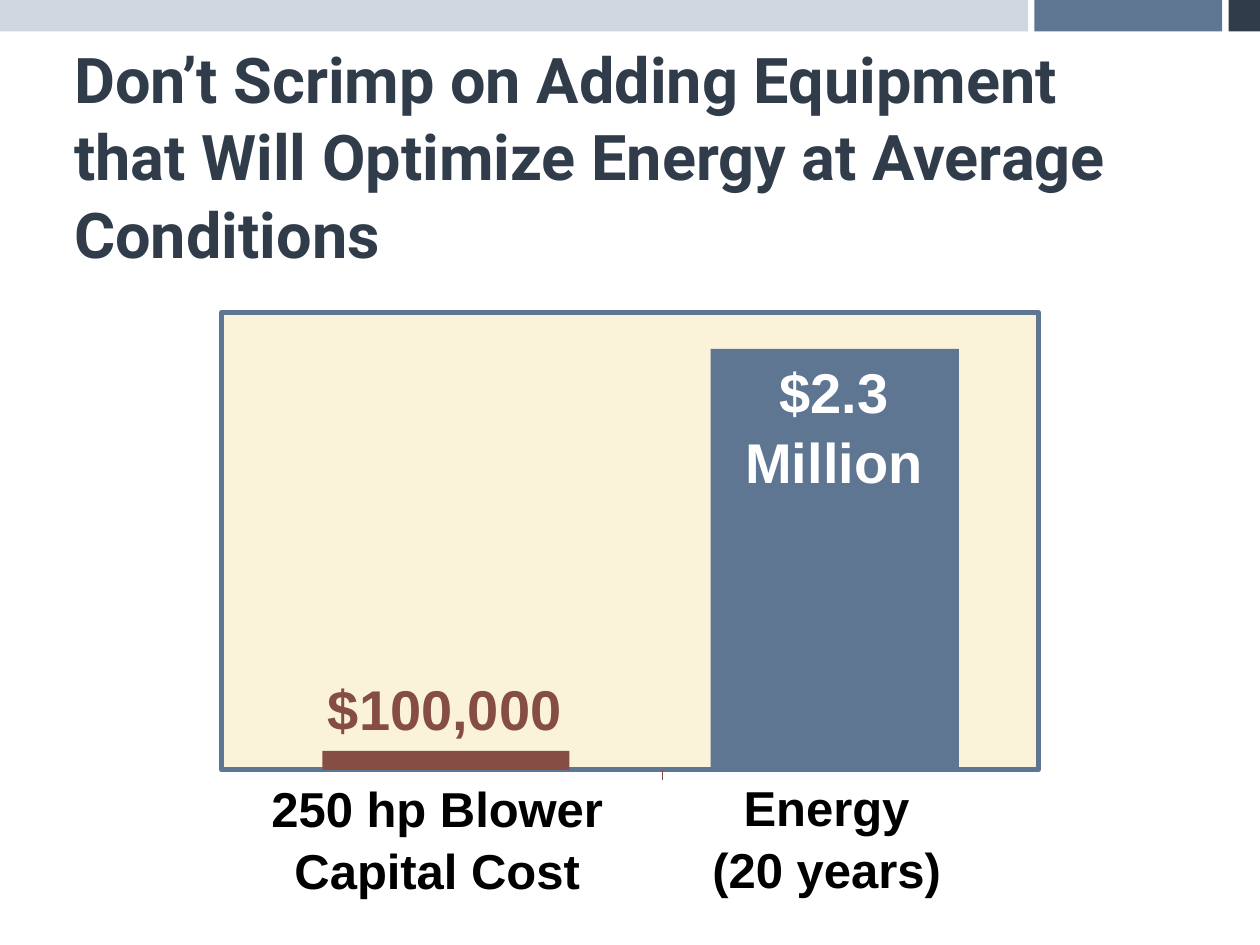
"""Build a slide comparing blower capital cost with its energy cost."""
from lxml import etree
from pptx import Presentation
from pptx.dml.color import RGBColor
from pptx.enum.shapes import MSO_CONNECTOR, MSO_SHAPE
from pptx.enum.text import MSO_ANCHOR, PP_ALIGN
from pptx.oxml.ns import qn
from pptx.util import Inches, Pt

RECTANGLE, ELLIPSE = MSO_SHAPE.RECTANGLE, MSO_SHAPE.OVAL
STRAIGHT = MSO_CONNECTOR.STRAIGHT
TOP, MIDDLE = MSO_ANCHOR.TOP, MSO_ANCHOR.MIDDLE
LEFT, CENTER = PP_ALIGN.LEFT, PP_ALIGN.CENTER

SLATE = RGBColor(0x5F, 0x76, 0x93)
NAVY = RGBColor(0x31, 0x3C, 0x4A)
MIST = RGBColor(0xD0, 0xD7, 0xE0)
CREAM = RGBColor(0xFA, 0xF3, 0xDA)
BRICK = RGBColor(0x86, 0x4D, 0x44)
BLACK = RGBColor(0, 0, 0)
WHITE = RGBColor(0xFF, 0xFF, 0xFF)

BASELINE = 6.11


def write(frame, text, size=32, color=BLACK, font="Arial", align=CENTER,
          anchor=TOP, spacing=1.05):
    frame.word_wrap = True
    frame.vertical_anchor = anchor
    paragraph = frame.paragraphs[0]
    paragraph.text = text
    paragraph.alignment = align
    paragraph.line_spacing = spacing
    for run in paragraph.runs:
        run.font.name = font
        run.font.size = Pt(size)
        run.font.bold = True
        run.font.color.rgb = color


class CostSlide:
    def __init__(self, deck):
        self.slide = deck.slides.add_slide(deck.slide_layouts[6])
        self.shapes = self.slide.shapes

    def shape(self, kind, box, fill=None, outline=None, weight=3):
        shape = self.shapes.add_shape(kind, *map(Inches, box))
        shape.shadow.inherit = False
        if fill is None:
            shape.fill.background()
        else:
            shape.fill.solid()
            shape.fill.fore_color.rgb = fill
        if outline is None:
            shape.line.fill.background()
        else:
            shape.line.color.rgb = outline
            shape.line.width = Pt(weight)
        return shape

    def bar(self, left, width, height, color):
        self.shape(RECTANGLE, (left, BASELINE - height, width, height), color)

    def text(self, box, text, **style):
        write(self.shapes.add_textbox(*map(Inches, box)).text_frame, text, **style)

    def category(self, box, text):
        write(self.shape(ELLIPSE, box).text_frame, text, size=28, anchor=MIDDLE)

    def tick(self, x, length, color):
        ends = (x, BASELINE + length, x, BASELINE)
        tick = self.shapes.add_connector(STRAIGHT, *map(Inches, ends))
        tick.line.color.rgb = color
        tick.line.width = Pt(0.75)
        etree.SubElement(tick.element.spPr, qn("a:effectLst"))


def main():
    deck = Presentation()
    deck.slide_width, deck.slide_height = Inches(10), Inches(7.5)
    page = CostSlide(deck)

    for left, width, color in ((8.21, 1.49, SLATE), (9.75, 0.25, NAVY), (0, 8.16, MIST)):
        page.shape(RECTANGLE, (left, 0, width, 0.25), color)
    page.text((0.49, 0.84, 8.9, 0.78),
              "Don’t Scrimp on Adding Equipment that Will Optimize Energy at Average Conditions",
              size=36, color=NAVY, font="Roboto", align=LEFT, anchor=MIDDLE, spacing=1.02)

    page.shape(RECTANGLE, (1.76, 2.48, 6.48, 3.63), CREAM, SLATE)
    page.bar(5.64, 1.97, 3.34, SLATE)
    page.bar(2.56, 1.96, 0.15, BRICK)
    page.tick(5.26, 0.08, BRICK)
    page.text((5.62, 2.76, 2, 1.17), "$2.3 Million", color=WHITE)
    page.text((2.32, 5.28, 2.42, 0.63), "$100,000", color=BRICK)
    page.category((0.81, 6.17, 5.32, 0.95), "250 hp Blower Capital Cost")
    page.category((3.9, 6.14, 5.32, 1), "Energy\v(20 years)")

    deck.save("out.pptx")


if __name__ == "__main__":
    main()
